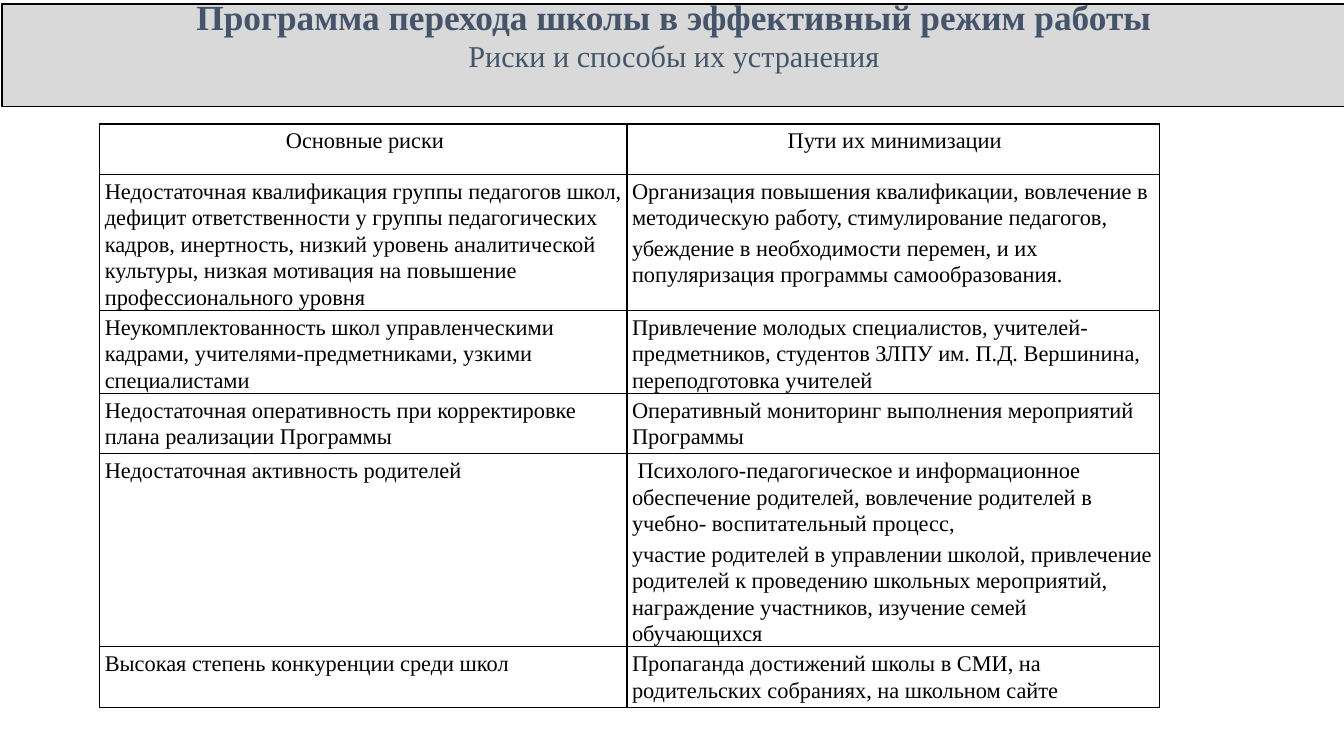
from dataclasses import dataclass

from lxml import etree
from pptx import Presentation
from pptx.dml.color import RGBColor
from pptx.enum.shapes import MSO_SHAPE
from pptx.enum.text import MSO_ANCHOR, PP_ALIGN
from pptx.oxml.ns import qn
from pptx.util import Pt

RECTANGLE = MSO_SHAPE.RECTANGLE
CENTER, LEFT = PP_ALIGN.CENTER, PP_ALIGN.LEFT
BOTTOM, TOP = MSO_ANCHOR.BOTTOM, MSO_ANCHOR.TOP


@dataclass(frozen=True)
class Theme:
    font: str = "Times New Roman"
    band: str = "D9D9D9"
    heading: str = "44546A"
    ink: str = "000000"
    title_size: float = 25.2
    subtitle_size: float = 21.6
    table_size: float = 16
    line_width: float = 1


TITLE = "Программа перехода школы в эффективный режим работы"
SUBTITLE = "Риски и способы их устранения"

COLUMN_WIDTHS = [376.6, 380.2]
ROW_HEIGHTS = [36, 97.2, 56.9, 43.2, 126.7, 43.2]
# Each cell is a list of paragraphs
RISKS = [
    (["Основные риски"], ["Пути их минимизации"]),
    (["Недостаточная квалификация группы педагогов школ,",
      "дефицит ответственности у группы педагогических кадров, инертность, "
      "низкий уровень аналитической культуры, низкая мотивация на повышение "
      "профессионального уровня"],
     ["Организация повышения квалификации, вовлечение в методическую работу, "
      "стимулирование педагогов,",
      "убеждение в необходимости перемен, и их популяризация программы "
      "самообразования."]),
    (["Неукомплектованность школ управленческими кадрами, "
      "учителями-предметниками, узкими специалистами"],
     ["Привлечение молодых специалистов, учителей-предметников, студентов "
      "ЗЛПУ им. П.Д. Вершинина, переподготовка учителей"]),
    (["Недостаточная оперативность при корректировке плана реализации Программы"],
     ["Оперативный мониторинг выполнения мероприятий Программы"]),
    (["Недостаточная активность родителей"],
     [" Психолого-педагогическое и информационное обеспечение родителей, "
      "вовлечение родителей в учебно- воспитательный процесс,",
      "участие родителей в управлении школой, привлечение родителей к "
      "проведению школьных мероприятий, награждение участников, изучение "
      "семей обучающихся"]),
    (["Высокая степень конкуренции среди школ"],
     ["Пропаганда достижений школы в СМИ, на родительских собраниях, "
      "на школьном сайте"]),
]


def write_text(paragraph, text, *, font, size, color, bold=False, align=LEFT,
               spacing=1.0, after=0):
    paragraph.alignment = align
    paragraph.line_spacing = spacing
    paragraph.space_before, paragraph.space_after = Pt(0), Pt(after)
    run = paragraph.add_run()
    run.text = text
    run.font.name, run.font.size, run.font.bold = font, Pt(size), bold
    run.font.color.rgb = RGBColor.from_string(color)


class SlideBuilder:
    def __init__(self, slide, theme):
        self.slide = slide
        self.theme = theme

    def title_band(self, left, top, width, height, title, subtitle):
        theme = self.theme
        shape = self.slide.shapes.add_shape(
            RECTANGLE, Pt(left), Pt(top), Pt(width), Pt(height))
        shape.shadow.inherit = False
        shape.fill.solid()
        shape.fill.fore_color.rgb = RGBColor.from_string(theme.band)
        shape.line.color.rgb = RGBColor.from_string(theme.ink)
        shape.line.width = Pt(theme.line_width)
        frame = shape.text_frame
        frame.word_wrap = True
        frame.vertical_anchor = BOTTOM
        frame.margin_top, frame.margin_bottom = Pt(0), Pt(23.7)
        write_text(frame.paragraphs[0], title, font=theme.font, align=CENTER,
                   size=theme.title_size, color=theme.heading, bold=True)
        write_text(frame.add_paragraph(), subtitle, font=theme.font, align=CENTER,
                   size=theme.subtitle_size, color=theme.heading)

    def table(self, left, top, widths, heights, rows):
        table = self.slide.shapes.add_table(
            len(rows), len(widths), Pt(left), Pt(top),
            Pt(sum(widths)), Pt(sum(heights))).table
        table.first_row = table.horz_banding = False
        for column, width in zip(table.columns, widths):
            column.width = Pt(width)
        for row, height in zip(table.rows, heights):
            row.height = Pt(height)
        for row_index, row in enumerate(rows):
            for column_index, texts in enumerate(row):
                # Only split paragraphs in the right column are spaced apart
                after = 2.7 if column_index == 1 and len(texts) > 1 else 0
                self.cell(table.cell(row_index, column_index), texts,
                          CENTER if row_index == 0 else LEFT, after)

    def cell(self, cell, texts, align, after):
        theme = self.theme
        self.cell_borders(cell)
        cell.fill.background()
        cell.vertical_anchor = TOP
        cell.margin_left, cell.margin_top = Pt(3.6), Pt(2.2)
        cell.margin_right, cell.margin_bottom = Pt(1.4), Pt(0)
        frame = cell.text_frame
        for index, text in enumerate(texts):
            paragraph = frame.add_paragraph() if index else frame.paragraphs[0]
            write_text(paragraph, text, font=theme.font, size=theme.table_size,
                       color=theme.ink, align=align, spacing=1.07, after=after)

    def cell_borders(self, cell):
        properties = cell._tc.get_or_add_tcPr()
        for side in ("a:lnL", "a:lnR", "a:lnT", "a:lnB"):
            line = etree.SubElement(properties, qn(side),
                                    w=str(Pt(self.theme.line_width)))
            fill = etree.SubElement(line, qn("a:solidFill"))
            etree.SubElement(fill, qn("a:srgbClr"), val=self.theme.ink)


def main():
    presentation = Presentation()
    presentation.slide_width, presentation.slide_height = Pt(960), Pt(540)
    slide = presentation.slides.add_slide(presentation.slide_layouts[6])
    builder = SlideBuilder(slide, Theme())

    # Heading band
    builder.title_band(1.4, 2.9, 960, 73.4, TITLE, SUBTITLE)
    # Risks and the ways to reduce them
    builder.table(71.3, 88.6, COLUMN_WIDTHS, ROW_HEIGHTS, RISKS)

    presentation.save("out.pptx")


if __name__ == "__main__":
    main()
